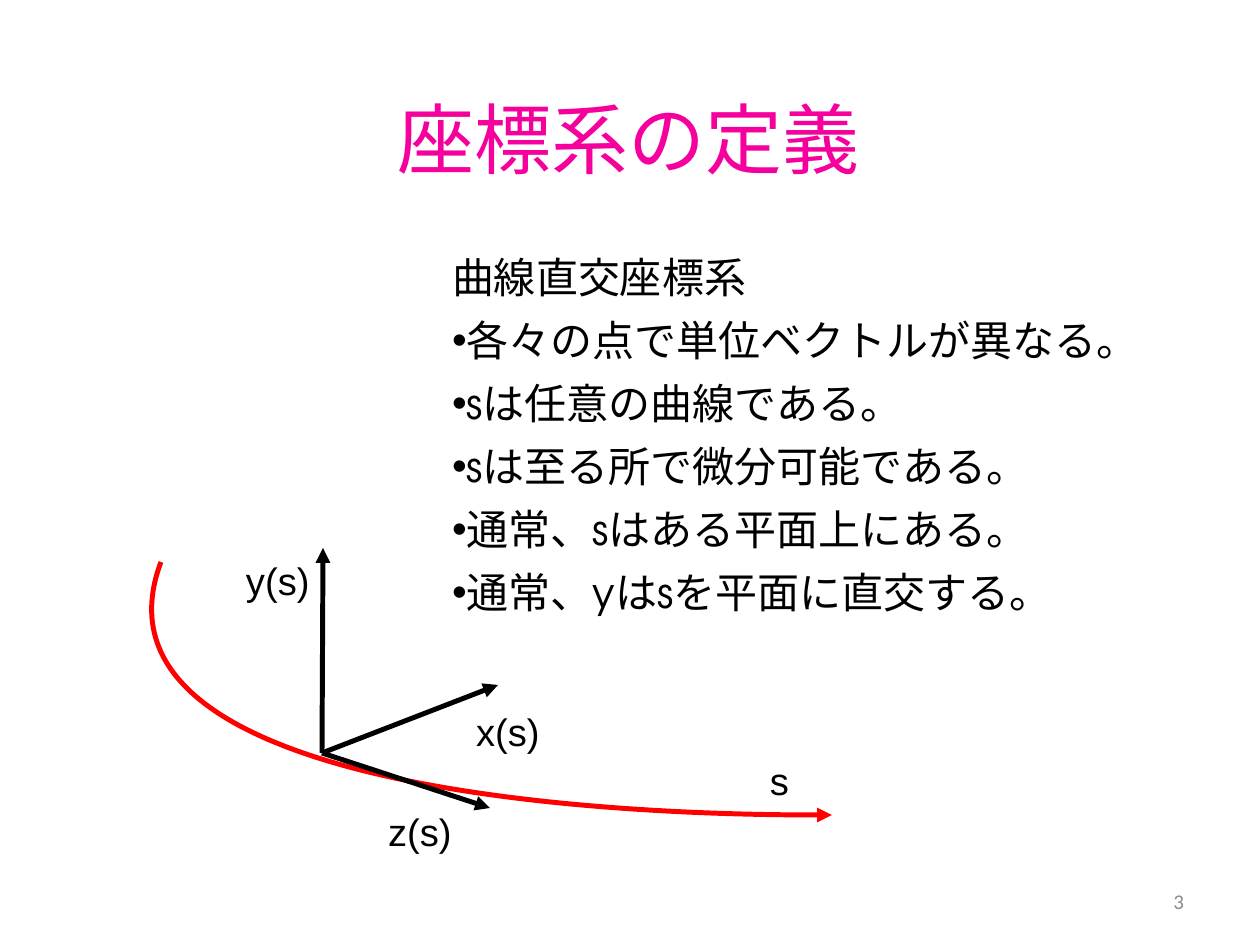
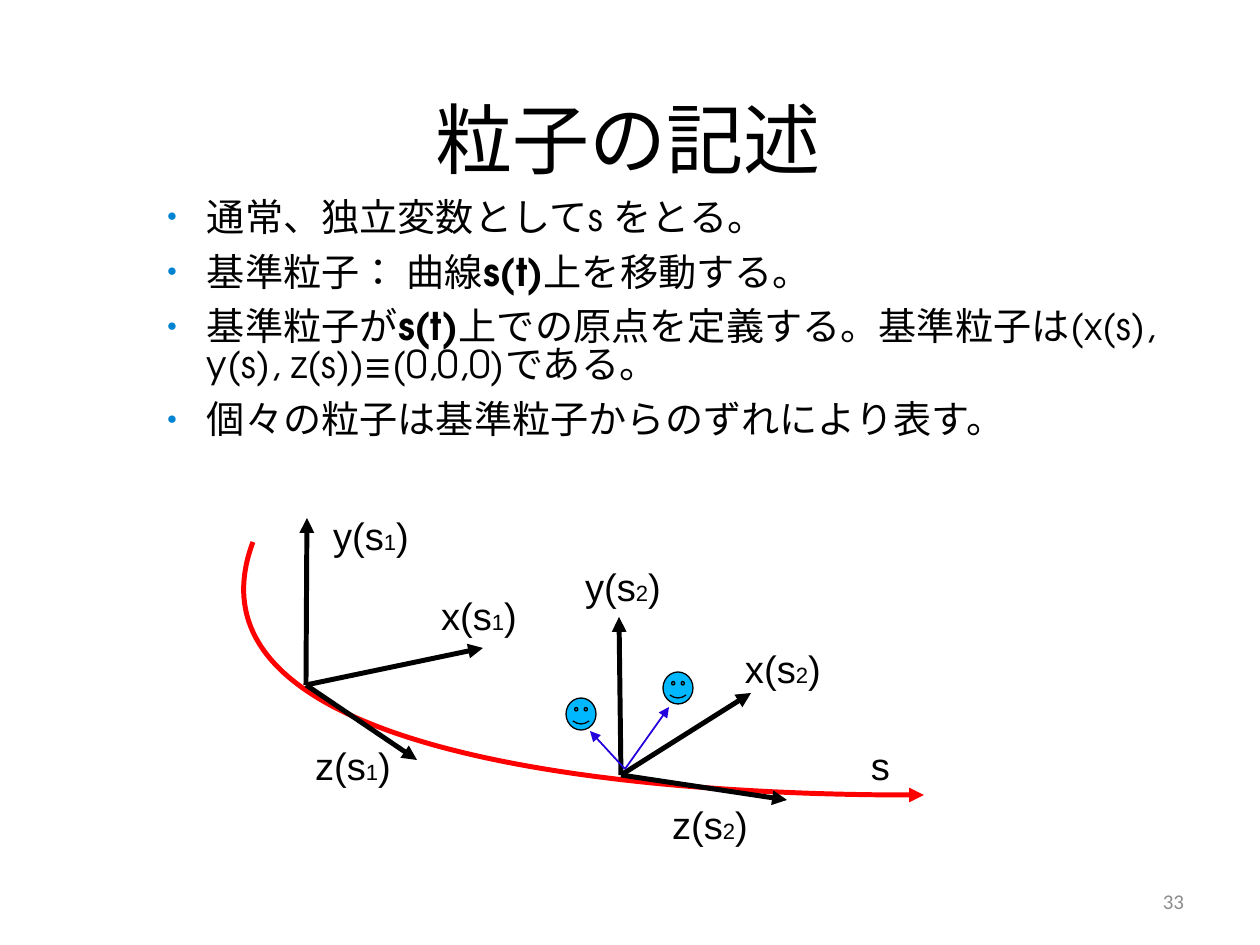
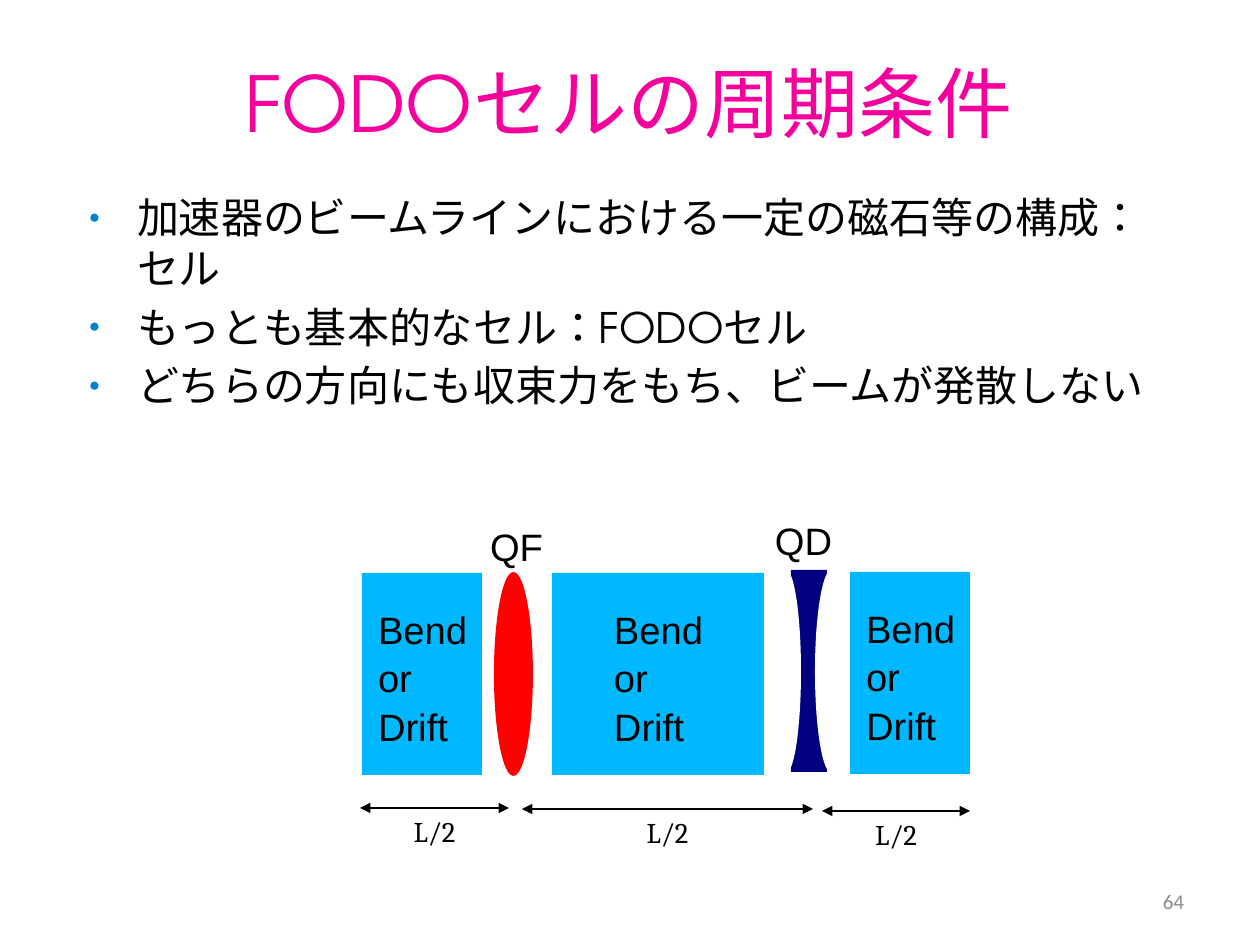
import dataclasses

import lxml.etree
import pptx
import pptx.dml.color
import pptx.enum.lang
import pptx.enum.shapes
import pptx.enum.text
import pptx.oxml.ns
import pptx.util

SHAPES = pptx.enum.shapes.MSO_SHAPE
ALIGN = pptx.enum.text.PP_ALIGN
ANCHOR = pptx.enum.text.MSO_ANCHOR
JAPANESE = pptx.enum.lang.MSO_LANGUAGE_ID.JAPANESE
qn = pptx.oxml.ns.qn
SCALE = 914400 / 126


@dataclasses.dataclass(frozen=True)
class Theme:
    black: str = "000000"
    white: str = "FFFFFF"
    pink: str = "F5009D"
    grey: str = "8C8C8C"
    red: str = "FF0000"
    sky: str = "00B8FF"
    navy: str = "000080"
    violet: str = "2300DC"
    bullet: str = "0084D1"
    display: str = "TeX Gyre Adventor"
    label: str = "Arial"
    serif: str = "Cambria"
    footer: str = "Calibri"
    title_size: float = 44
    body_size: float = 24
    label_size: float = 21.8
    length_size: float = 16.3
    footer_size: float = 12
    axis_width: float = 2.83
    offset_width: float = 1
    thin_width: float = 0.75


THEME = Theme()

DEFINITION = [
    "曲線直交座標系",
    "各々の点で単位ベクトルが異なる。",
    "sは任意の曲線である。",
    "sは至る所で微分可能である。",
    "通常、sはある平面上にある。",
    "通常、yはsを平面に直交する。",
]
PARTICLES = [
    "通常、独立変数としてs をとる。",
    ["基準粒子： 曲線", ("s(t)", "bold"), "上を移動する。"],
    ["基準粒子が", ("s(t)", "bold"),
     "上での原点を定義する。基準粒子は(x(s), y(s), z(s))≡(0,0,0)である。"],
    "個々の粒子は基準粒子からのずれにより表す。",
]
FODO = [
    "加速器のビームラインにおける一定の磁石等の構成：セル",
    "もっとも基本的なセル：FODOセル",
    "どちらの方向にも収束力をもち、ビームが発散しない",
]
MAGNET = ["Bend", "or", "Drift"]
HALF_CELL = "L/2"

ORBIT_CONTROLS = [(-97, 258), (671, 253), (671, 253)]
SINGLE_FRAME = {
    "origin": (322, 753), "index": "",
    "axes": {"y": ((323, 548), (246, 557)),
             "x": ((498, 685), (476, 708)),
             "z": ((490, 808), (388, 808))},
}
FRAMES = [
    {"origin": (306, 685), "index": "1",
     "axes": {"y": ((307, 518), (333, 512)),
              "x": ((483, 648), (441, 592)),
              "z": ((417, 760), (315, 742))}},
    {"origin": (621, 775), "index": "2",
     "axes": {"y": ((619, 617), (585, 563)),
              "x": ((751, 693), (745, 645)),
              "z": ((787, 800), (672, 801))}},
]
PARTICLE_START = (625, 769)
PARTICLE_FACES = [((663, 672), (669, 707)), ((566, 698), (590, 731))]

OPTICS = [
    (SHAPES.OVAL, (494, 572, 39, 204), THEME.red),
    (SHAPES.RECTANGLE, (791, 570, 36, 202), THEME.navy),
    (SHAPES.OVAL, (771, 570, 30, 203), THEME.white),
    (SHAPES.OVAL, (815, 570, 33, 203), THEME.white),
]
BENDS = [(362, 573, 120, 202), (552, 573, 212, 202), (850, 572, 120, 202)]
MAGNET_TEXT_WIDTH = 88
QUADRUPOLES = {"QF": (490, 523), "QD": (775, 517)}
LENGTHS = [(360, 509, 808), (522, 813, 809), (822, 970, 811)]


def px(value):
    return pptx.util.Emu(round(value * SCALE))


def rgb(value):
    return pptx.dml.color.RGBColor.from_string(value)


def apply(target, values):
    for name, value in values.items():
        setattr(target, name, value)


def add_bullet(para, char, hang=None, color=None, percent=None):
    props = para._p.get_or_add_pPr()
    if hang:
        margin, indent = hang
        props.set("marL", str(px(margin)))
        props.set("indent", str(px(indent)))
    if color:
        holder = lxml.etree.SubElement(props, qn("a:buClr"))
        lxml.etree.SubElement(holder, qn("a:srgbClr"), val=color)
    if percent:
        lxml.etree.SubElement(props, qn("a:buSzPct"), val=str(percent * 1000))
    lxml.etree.SubElement(props, qn("a:buFont"), typeface=THEME.label)
    lxml.etree.SubElement(props, qn("a:buChar"), char=char)


def write(shape, paras, font, size, color=THEME.black, insets=(0, 4, 0, 0),
          anchor=ANCHOR.TOP, bullet=None, **para_format):
    frame = shape.text_frame
    sides = ("margin_left", "margin_top", "margin_right", "margin_bottom")
    apply(frame, dict(zip(sides, map(px, insets))))
    apply(frame, {"word_wrap": True, "vertical_anchor": anchor})
    for number, spans in enumerate(paras):
        para = frame.paragraphs[0] if number == 0 else frame.add_paragraph()
        apply(para, {"alignment": ALIGN.LEFT, **para_format})
        if bullet:
            add_bullet(para, **bullet)
        for part in [spans] if isinstance(spans, str) else spans:
            text, style = part if isinstance(part, tuple) else (part, "")
            span = para.add_run()
            span.text = text
            apply(span.font, {"name": font, "size": pptx.util.Pt(size),
                              "bold": style == "bold", "language_id": JAPANESE})
            span.font.color.rgb = rgb(color)
            if style == "sub":
                span._r.get_or_add_rPr().set("baseline", "-1000")


def add_text(page, place, paras, *style, **options):
    box = page.shapes.add_textbox(*map(px, place))
    write(box, paras, *style, **options)
    return box


def add_label(page, place, spans):
    add_text(page, (*place, 105, 43), [spans], THEME.label, THEME.label_size,
             line_spacing=0.93)


def add_figure(page, kind, place, fill, line=None):
    figure = page.shapes.add_shape(kind, *map(px, place))
    figure.shadow.inherit = False
    figure.fill.solid()
    figure.fill.fore_color.rgb = rgb(fill)
    if line:
        figure.line.color.rgb = rgb(line)
        figure.line.width = pptx.util.Pt(THEME.thin_width)
    else:
        figure.line.fill.background()
    return figure


def style_line(shape, color, width, ends):
    shape.line.color.rgb = rgb(color)
    shape.line.width = pptx.util.Pt(width)
    stroke = shape.line._get_or_add_ln()
    for end in ends:
        lxml.etree.SubElement(stroke, qn("a:" + end), type="triangle")


def add_arrow(page, start, end, color=THEME.black, width=THEME.axis_width,
              ends=("tailEnd",)):
    arrow = page.shapes.add_connector(
        pptx.enum.shapes.MSO_CONNECTOR.STRAIGHT, *map(px, (*start, *end)))
    style_line(arrow, color, width, ends)
    lxml.etree.SubElement(arrow._element.spPr, qn("a:effectLst"))


def add_orbit(page, start, label_place):
    left, top = start
    builder = page.shapes.build_freeform(left, top, scale=SCALE)
    builder.add_line_segments(
        [(left + dx, top + dy) for dx, dy in ORBIT_CONTROLS], close=False)
    orbit = builder.convert_to_shape()
    outline = next(orbit._element.iter(qn("a:path")))
    segments = outline.findall(qn("a:lnTo"))
    curve = lxml.etree.SubElement(outline, qn("a:cubicBezTo"))
    for segment in segments:
        curve.append(segment[0])
        outline.remove(segment)
    orbit.shadow.inherit = False
    orbit.fill.background()
    style_line(orbit, THEME.red, THEME.axis_width, ("tailEnd",))
    add_label(page, label_place, "s")


def add_frame(page, frame):
    index = frame["index"]
    for axis, (tip, label_place) in frame["axes"].items():
        add_arrow(page, frame["origin"], tip)
        spans = [f"{axis}(s", (index, "sub"), ")"] if index else f"{axis}(s)"
        add_label(page, label_place, spans)


def add_page(deck, title, number, color=THEME.pink, title_top=49):
    page = deck.slides.add_slide(deck.slide_layouts[6])
    add_text(page, (903, 876, 294, 50), [number], THEME.footer,
             THEME.footer_size, THEME.grey, insets=(13, 6, 13, 6),
             anchor=ANCHOR.MIDDLE, alignment=ALIGN.RIGHT)
    add_text(page, (100, title_top, 1057, 180), [title], THEME.display,
             THEME.title_size, color, insets=(13, 4, 13, 6),
             anchor=ANCHOR.MIDDLE, alignment=ALIGN.CENTER)
    return page


def add_body(page, place, paras, size, hang, **spacing):
    add_text(page, place, paras, THEME.display, size, insets=(13, 6, 13, 6),
             bullet={"char": "●", "hang": hang, "color": THEME.bullet,
                     "percent": 45},
             space_before=pptx.util.Pt(size * 0.2), **spacing)


def build_definition(deck):
    page = add_page(deck, "座標系の定義", "3")
    add_orbit(page, (161, 562), (770, 757))
    add_frame(page, SINGLE_FRAME)
    box = add_text(page, (452, 260, 740, 370), DEFINITION, THEME.display,
                   THEME.body_size, insets=(0, 0, 0, 0), line_spacing=1.25)
    heading, *points = box.text_frame.paragraphs
    heading.line_spacing = 0.83
    for point in points:
        add_bullet(point, "•")


def build_particles(deck):
    page = add_page(deck, "粒子の記述", "33", THEME.black)
    add_body(page, (140, 195, 1057, 441), PARTICLES, THEME.label_size,
             (54, -40), line_spacing=0.83, space_after=pptx.util.Pt(5.2))
    add_orbit(page, (253, 542), (871, 742))
    for frame in FRAMES:
        add_frame(page, frame)
    for corner, tip in PARTICLE_FACES:
        add_figure(page, SHAPES.SMILEY_FACE, (*corner, 30, 32), THEME.sky,
                   THEME.black)
        add_arrow(page, PARTICLE_START, tip, THEME.violet, THEME.offset_width)


def build_fodo(deck):
    page = add_page(deck, "FODOセルの周期条件", "64", title_top=13)
    add_body(page, (64, 186, 1104, 441), FODO, THEME.body_size, (60, -48))
    for kind, place, fill in OPTICS:
        add_figure(page, kind, place, fill)
    for place in BENDS:
        bend = add_figure(page, SHAPES.RECTANGLE, place, THEME.sky)
        margin = (place[2] - MAGNET_TEXT_WIDTH) // 2
        write(bend, MAGNET, THEME.label, THEME.label_size,
              insets=(margin, 4, 0, 0), anchor=ANCHOR.MIDDLE,
              line_spacing=1.06)
    for name, place in QUADRUPOLES.items():
        add_label(page, place, name)
    for left, right, level in LENGTHS:
        add_arrow(page, (left, level), (right, level), width=THEME.thin_width,
                  ends=("headEnd", "tailEnd"))
        add_text(page, (left, level + 8, right - left, 34), [HALF_CELL],
                 THEME.serif, THEME.length_size, insets=(0, 0, 0, 0),
                 anchor=ANCHOR.MIDDLE, alignment=ALIGN.CENTER,
                 line_spacing=0.91)


def main():
    deck = pptx.Presentation()
    apply(deck, {"slide_width": px(1260), "slide_height": px(945)})
    for build in (build_definition, build_particles, build_fodo):
        build(deck)
    deck.save("out.pptx")


if __name__ == "__main__":
    main()
